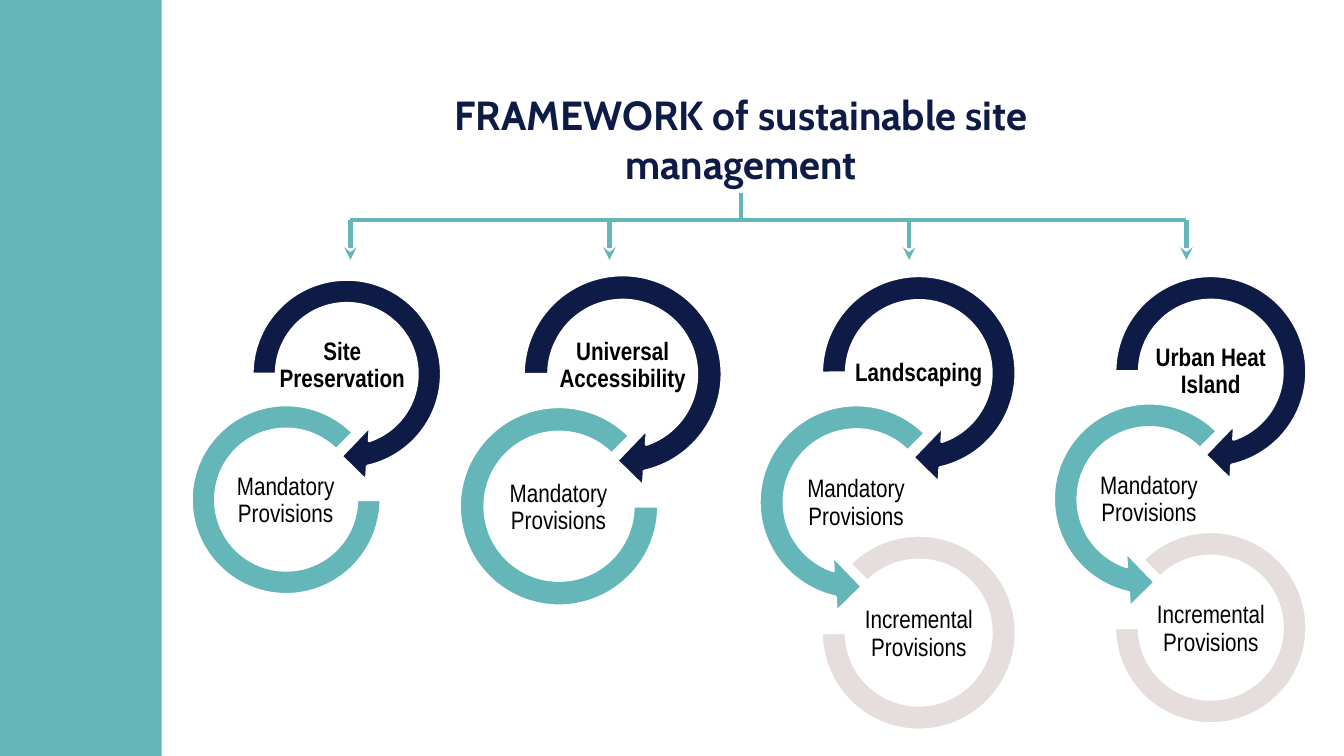
import math

import pptx
import pptx.dml.color
import pptx.enum.shapes
import pptx.enum.text
import pptx.oxml
import pptx.oxml.ns
import pptx.util

Pt = pptx.util.Pt
RGB = pptx.dml.color.RGBColor
SHAPE = pptx.enum.shapes.MSO_SHAPE
NAVY = RGB(0x0E, 0x1B, 0x47)
TEAL = RGB(0x64, 0xB6, 0xB8)
SAND = RGB(0xE6, 0xDE, 0xDC)
WHITE = RGB(255, 255, 255)
BLACK = RGB(0, 0, 0)
NS = pptx.oxml.ns.nsdecls("a")

deck = pptx.Presentation()
deck.slide_width, deck.slide_height = Pt(960), Pt(540)
slide = deck.slides.add_slide(deck.slide_layouts[6])
shapes = slide.shapes


def ring(x, y, size, color, arc=None, start=180, side=1):
    """Draw a ring round (x, y): a block arc, or an arrow mirrored by side=-1."""
    if arc:
        wide = size * 0.862
        item = shapes.add_shape(SHAPE.BLOCK_ARC, Pt(x - wide / 2), Pt(y - wide / 2),
                                Pt(wide), Pt(wide))
        for i, angle in enumerate(arc):
            item.adjustments[i] = angle * 0.6
        item.adjustments[2] = 0.127
    else:
        # Steps are in percent of the size, from the centre
        steps = []
        for radius, first, last in ((43, start, 437.5), (32.1, 431.5, start)):
            count = math.ceil(abs(last - first) / 85)
            turn = math.radians((last - first) / count)
            pull = 4 / 3 * math.tan(turn / 4)
            nodes = [math.radians(first) + turn * i for i in range(count + 1)]
            ends = [(radius * math.cos(a), radius * math.sin(a)) for a in nodes]
            steps.append(("moveTo" if radius == 43 else "lnTo", ends[:1]))
            for (u, v), (p, q) in zip(ends, ends[1:]):
                steps.append(("cubicBezTo", [(u - pull * v, v + pull * u),
                                             (p + pull * q, q - pull * p), (p, q)]))
            if radius == 43:
                steps += [("lnTo", [spot])
                          for spot in ((8.9, 48.6), (-2.5, 37.4), (10.6, 23.8))]
        near, far = -size / 2, size / 2
        frame = [(Pt(x + u), Pt(y + v))
                 for u, v in ((near, near), (far, near), (far, far), (near, far))]
        path = shapes.build_freeform(*frame[0])
        path.add_line_segments(frame[1:], close=True)
        item = path.convert_to_shape()
        line = item._element.spPr.find(".//" + pptx.oxml.ns.qn("a:path"))
        for part in list(line):
            line.remove(part)
        for kind, spots in steps:
            dots = "".join(f'<a:pt x="{Pt(size * (50 + side * u) / 100)}" '
                           f'y="{Pt(size * (50 + v) / 100)}"/>' for u, v in spots)
            line.append(pptx.oxml.parse_xml(f"<a:{kind} {NS}>{dots}</a:{kind}>"))
        line.append(pptx.oxml.parse_xml(f"<a:close {NS}/>"))
    item.shadow.inherit = False
    item.fill.solid()
    item.fill.fore_color.rgb = color
    item.line.color.rgb = WHITE
    item.line.width = Pt(2)


def label(text, x, y, wide, high, size=18, font="Arial Narrow", color=BLACK,
          bold=False, inset=0.9, lead=0.9, anchor="MIDDLE"):
    """Add centred text round (x, y)."""
    box = shapes.add_textbox(Pt(x - wide / 2), Pt(y - high / 2), Pt(wide), Pt(high))
    frame = box.text_frame
    frame.word_wrap = True
    frame.vertical_anchor = pptx.enum.text.MSO_ANCHOR[anchor]
    frame.margin_left = frame.margin_right = Pt(inset)
    frame.margin_top = frame.margin_bottom = Pt(inset)
    para = frame.paragraphs[0]
    para.text = text
    para.alignment = pptx.enum.text.PP_ALIGN.CENTER
    para.line_spacing = lead
    para.font.size = Pt(size)
    para.font.name = font
    para.font.bold = bold
    para.font.color.rgb = color


bar = shapes.add_shape(SHAPE.RECTANGLE, 0, 0, Pt(115.5), Pt(540))
bar.shadow.inherit = False
bar.fill.solid()
bar.fill.fore_color.rgb = TEAL
bar.line.fill.background()

# centre x, centre y, size, heading, heading shift x and y, heading width, has increment
topics = [
    (247.7, 267.1, 157, "Site Preservation", -3.2, -5.7, 100, False),
    (444.8, 267.3, 164.9, "Universal Accessibility", 0, -6, 103, False),
    (656.3, 266.4, 161.3, "Landscaping", 0, 0, 115, True),
    (864.9, 265.4, 159.1, "Urban Heat Island", 0, 0.3, 91.5, True),
]
for x, y, size, name, dx, dy, wide, more in topics:
    ring(x, y, size, NAVY)
    label(name, x + dx, y + dy, wide, size * 0.28, bold=True)
    left, mid, low = x - size * 0.276, y + size * 0.572, y + size * 1.15
    if more:
        ring(left, mid, size, TEAL, start=225, side=-1)
    else:
        ring(left, mid, size, TEAL, arc=(0, 315))
    label("Mandatory Provisions", left - 0.3, mid + 0.9, size * 0.56, size * 0.28)
    if more:
        ring(x, low, size, SAND, arc=(225, 180))
        label("Incremental Provisions", x, low + 1.2, size * 0.56, size * 0.28)

label("FRAMEWORK of sustainable site management", 529.5, 100, 495, 78, size=29,
      font="Cabin", color=NAVY, bold=True, inset=3.6, lead=1, anchor="TOP")

drops = [250.3, 435.4, 649.4, 847.5]
rail = 157
lines = [(529.2, 138, 529.2, rail, False), (drops[0], rail, drops[-1], rail, False)]
lines += [(x, rail, x, 185.6, True) for x in drops]
for x1, y1, x2, y2, arrow in lines:
    line = shapes.add_connector(pptx.enum.shapes.MSO_CONNECTOR.STRAIGHT,
                                Pt(x1), Pt(y1), Pt(x2), Pt(y2))
    line.line.color.rgb = TEAL
    line.line.width = Pt(3)
    props = line._element.spPr
    if arrow:
        tail = pptx.oxml.parse_xml(f'<a:tailEnd {NS} type="stealth"/>')
        line.line._get_or_add_ln().append(tail)
    props.append(pptx.oxml.parse_xml(f"<a:effectLst {NS}/>"))

deck.save("out.pptx")
